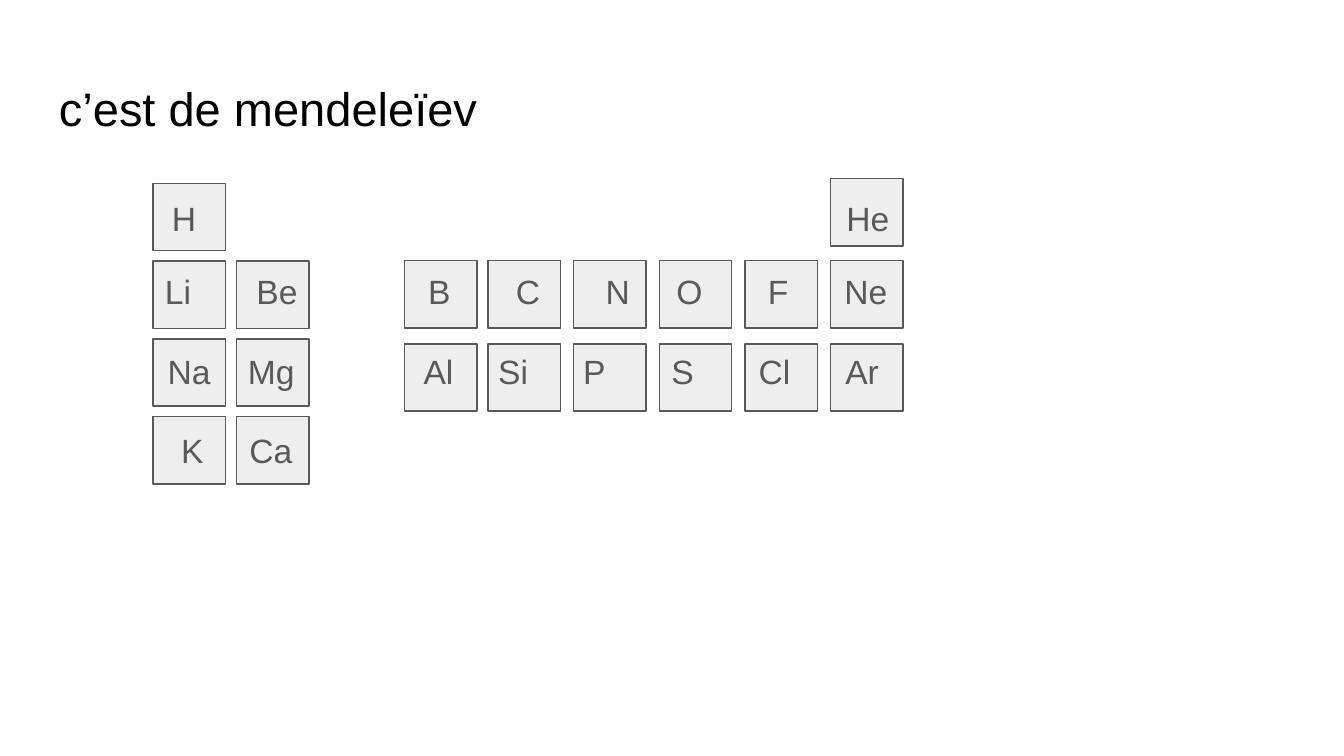
from dataclasses import dataclass

from lxml.etree import SubElement
from pptx import Presentation
from pptx.dml.color import RGBColor
from pptx.enum.shapes import MSO_SHAPE
from pptx.oxml.ns import qn
from pptx.util import Pt


@dataclass(frozen=True)
class Theme:
    """Colours, font and type sizes."""
    title: RGBColor = RGBColor(0, 0, 0)
    symbol: RGBColor = RGBColor(0x59, 0x59, 0x59)
    cell: RGBColor = RGBColor(0xEE, 0xEE, 0xEE)
    font: str = "Arial"
    title_size: float = 25.2
    symbol_size: float = 18
    line: float = 0.75
    inset: float = 7.2


class Board:
    """Holds the theme and the current slide."""

    def __init__(self, s, theme):
        """Keep the slide and its theme."""
        self.s, self.theme = s, theme

    def cell(self, x, y):
        """Draw one element square."""
        sp = self.s.shapes.add_shape(MSO_SHAPE.RECTANGLE, Pt(x), Pt(y), Pt(38.9), Pt(36))
        sp.shadow.inherit = False
        sp.fill.solid()
        sp.fill.fore_color.rgb = self.theme.cell
        sp.line.color.rgb = self.theme.symbol
        sp.line.width = Pt(self.theme.line)

    def text(self, words, box, size, color, stops=()):
        """Add one line of text with optional tab stops."""
        tf = self.s.shapes.add_textbox(*map(Pt, box)).text_frame
        tf.word_wrap = True
        tf.margin_left = tf.margin_right = Pt(self.theme.inset)
        tf.margin_top = tf.margin_bottom = Pt(self.theme.inset)
        p = tf.paragraphs[0]
        if stops:
            tabs = SubElement(p._p.get_or_add_pPr(), qn("a:tabLst"))
            for stop in stops:
                SubElement(tabs, qn("a:tab"), pos=str(Pt(stop)), algn="l")
        r = p.add_run()
        r.text = words
        r.font.name, r.font.size = self.theme.font, Pt(size)
        r.font.color.rgb = color

    def title(self, words):
        """Add the slide title."""
        self.text(words, (24.5, 35.3, 671, 45.4), self.theme.title_size, self.theme.title)

    def period(self, y, symbols):
        """Add a row of symbols, each at its own x."""
        first, *others = symbols.values()
        box = (first - self.theme.inset, y, 550, 36)
        self.text("\t".join(symbols), box, self.theme.symbol_size, self.theme.symbol,
                  [x - first for x in others])


PERIODS = (
    (98.6, {"H": 92.2, "He": 453.5}),
    (138.2, {"Li": 88.5, "Be": 137.5, "B": 229.5, "C": 276.5,
             "N": 324.5, "O": 362.5, "F": 411.5, "Ne": 452.5}),
    (180.7, {"Na": 89.9, "Mg": 132.9, "Al": 227, "Si": 267,
             "P": 312.5, "S": 359.8, "Cl": 406.5, "Ar": 453}),
    (223.2, {"K": 97.2, "Ca": 133.7}),
)


def main():
    """Build the periodic table slide."""
    prs = Presentation()
    prs.slide_width, prs.slide_height = Pt(720), Pt(405)
    board = Board(prs.slides.add_slide(prs.slide_layouts[6]), Theme())
    board.title("c’est de mendeleïev")

    alkali, earth = 82.1, 126.7
    left_rows = [98.2 + 41.7 * i for i in range(4)]
    right_columns = [216.7] + [261.4 + 45.9 * i for i in range(5)]
    for y in left_rows:
        board.cell(alkali, y)
    for y in left_rows[1:]:
        board.cell(earth, y)
    for y in (139.7, 184.3):
        for x in right_columns:
            board.cell(x, y)
    board.cell(right_columns[-1], 95.8)

    for y, symbols in PERIODS:
        board.period(y, symbols)
    prs.save("out.pptx")


if __name__ == "__main__":
    main()
